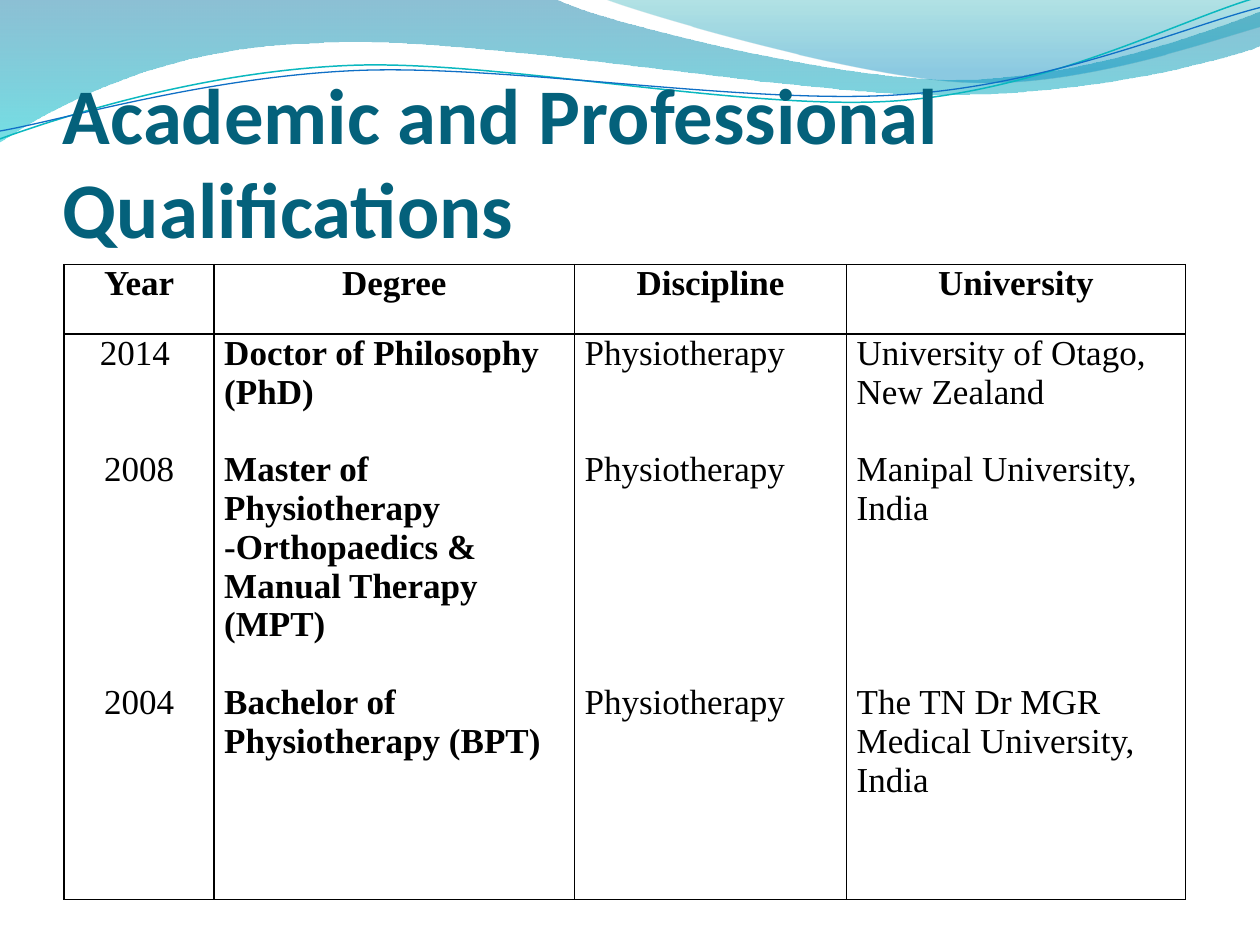
from dataclasses import dataclass

import pptx
import pptx.dml.color
import pptx.enum.text
import pptx.oxml
import pptx.oxml.ns
import pptx.util

Inches = pptx.util.Inches
Pt = pptx.util.Pt
qn = pptx.oxml.ns.qn
NAMESPACE = pptx.oxml.ns.nsdecls("a")
Point = tuple[float, float]
WIDTH, HEIGHT = 10, 7.5
TABLE_FONT, TABLE_SIZE = "Times New Roman", 20
LINE_PITCH = 22.15  # height in points of one line of table text


@dataclass
class Stop:
    position: float
    color: str
    opacity: int


@dataclass
class Wave:
    """Outline in inches: a segment of one point is straight, of three a Bézier curve."""
    start: Point
    segments: list[list[Point]]
    stops: tuple[Stop, ...] = ()
    line_color: str = ""
    line_width: float = 0


@dataclass
class Column:
    heading: str
    width: float
    entries: tuple[str, str, str]
    line_counts: tuple[int, int, int]
    bold: bool = False
    centered: bool = False


WAVES = [
    Wave((0, 0), [
        [(4.4, -0.01)], [(4.76, 0.17), (6.64, 0.63), (7.58, 0.63)],
        [(8.53, 0.63), (9.58, 0.26), (10, 0.09)], [(10.01, 0.36)],
        [(9.83, 0.44), (8.7, 0.76), (7.46, 0.75)],
        [(6.22, 0.75), (3.82, 0.28), (2.57, 0.34)],
        [(1.29, 0.36), (0.46, 0.83), (-0.01, 1.13)], [(0, 0)],
    ], stops=(Stop(0, "0074A1", 45), Stop(1, "00C6CF", 55))),
    Wave((4.79, -0.01), [
        [(5.09, 0.11), (6.82, 0.62), (7.69, 0.65)],
        [(8.56, 0.69), (9.61, 0.32), (10, 0.21)], [(10, 0)], [(4.79, -0.01)],
    ], stops=(Stop(0, "00A1A9", 30), Stop(0.8, "008BBF", 45))),
    Wave((-0.02, 1.11), [
        [(0.48, 0.93), (1.58, 0.57), (2.77, 0.52)],
        [(3.95, 0.47), (5.93, 0.89), (7.13, 0.8)],
        [(8.33, 0.71), (9.38, 0.15), (9.98, -0.02)],
    ], line_color="0AB8BF", line_width=0.85),
    Wave((0, 1.04), [
        [(0.47, 0.96), (1.64, 0.61), (2.83, 0.56)],
        [(4.03, 0.51), (5.97, 0.84), (7.17, 0.75)],
        [(8.36, 0.67), (9.41, 0.21), (10, 0.06)],
    ], line_color="0F6FC6", line_width=0.75),
]

ENTRY_STARTS = (0, 3, 9)  # text line on which each qualification begins
COLUMNS = [
    Column("Year", 1.19, ("2014 ", "2008", "2004"), (1, 1, 1), centered=True),
    Column("Degree", 2.86, (
        "Doctor of Philosophy (PhD)",
        "Master of Physiotherapy -Orthopaedics & Manual Therapy (MPT)",
        "Bachelor of Physiotherapy (BPT)"), (2, 5, 2), bold=True),
    Column("Discipline", 2.16, ("Physiotherapy",) * 3, (1, 1, 1)),
    Column("University", 2.69, (
        "University of Otago, New Zealand",
        "Manipal University, India",
        "The TN Dr MGR Medical University, India"), (2, 2, 3)),
]
ROW_HEIGHTS = (0.55, 4.49)


def rgb(color: str) -> pptx.dml.color.RGBColor:
    return pptx.dml.color.RGBColor.from_string(color)


def bend(shape, segments: list[list[Point]]) -> None:
    """Join the three straight steps of each curved segment into one Bézier curve."""
    steps = iter(shape.element.spPr.findall(".//" + qn("a:lnTo")))
    for segment in segments:
        group = [next(steps) for _ in segment]
        if len(group) == 1:
            continue
        curve = pptx.oxml.parse_xml(f"<a:cubicBezTo {NAMESPACE}/>")
        group[0].addprevious(curve)
        for step in group:
            curve.append(step[0])
            step.getparent().remove(step)


def draw_wave(slide, wave: Wave) -> None:
    points = [wave.start] + [point for segment in wave.segments for point in segment]
    first, *rest = [(Inches(x), Inches(y)) for x, y in points]
    builder = slide.shapes.build_freeform(*first)
    builder.add_line_segments(rest, close=bool(wave.stops))
    shape = builder.convert_to_shape()
    bend(shape, wave.segments)
    shape.shadow.inherit = False
    if not wave.stops:
        shape.fill.background()
        shape.line.color.rgb = rgb(wave.line_color)
        shape.line.width = Pt(wave.line_width)
        return
    shape.line.fill.background()
    shape.fill.gradient()
    shape.fill.gradient_angle = 270
    for target, stop in zip(shape.fill.gradient_stops, wave.stops):
        target.position = stop.position
        target.color.rgb = rgb(stop.color)
    colors = shape.element.spPr.findall(".//" + qn("a:srgbClr"))
    for color, stop in zip(colors, wave.stops):
        color.append(pptx.oxml.parse_xml(
            f'<a:alpha {NAMESPACE} val="{stop.opacity * 1000}"/>'))


def add_run(para, text: str, font: str, size: float, color: str, bold: bool) -> None:
    span = para.add_run()
    span.text = text
    span.font.name = font
    span.font.size = Pt(size)
    span.font.color.rgb = rgb(color)
    span.font.bold = bold


def draw_title(slide, text: str) -> None:
    box = slide.shapes.add_textbox(Inches(0.05 * WIDTH), Inches(0.77),
                                   Inches(0.9 * WIDTH), Inches(1.25))
    frame = box.text_frame
    frame.word_wrap = True
    frame.vertical_anchor = pptx.enum.text.MSO_ANCHOR.BOTTOM
    frame.margin_left = frame.margin_right = frame.margin_bottom = 0
    add_run(frame.paragraphs[0], text, "Calibri", 45, "04617B", True)


def style_cell(cell) -> None:
    """Clear the fill, set the margins and rule all four sides in black."""
    cell.margin_left = cell.margin_right = Inches(0.08)
    cell.margin_top = cell.margin_bottom = 0
    properties = cell._tc.get_or_add_tcPr()
    for side in ("lnL", "lnR", "lnT", "lnB"):
        properties.append(pptx.oxml.parse_xml(
            f'<a:{side} {NAMESPACE} w="{Pt(1)}"><a:solidFill>'
            f'<a:srgbClr val="000000"/></a:solidFill></a:{side}>'))
    cell.fill.background()


def write_cell(cell, entries: tuple[str, ...], gaps: list[int],
               bold: bool, centered: bool) -> None:
    """Write one paragraph per entry, each after a gap counted in lines."""
    style_cell(cell)
    align = pptx.enum.text.PP_ALIGN
    frame = cell.text_frame
    for index, (entry, gap) in enumerate(zip(entries, gaps)):
        para = frame.add_paragraph() if index else frame.paragraphs[0]
        para.alignment = align.CENTER if centered else align.LEFT
        para.space_before = Pt(gap * LINE_PITCH)
        add_run(para, entry, TABLE_FONT, TABLE_SIZE, "000000", bold)


def draw_table(slide) -> None:
    frame = slide.shapes.add_table(
        len(ROW_HEIGHTS), len(COLUMNS), Inches(0.51), Inches(2.1),
        Inches(sum(column.width for column in COLUMNS)), Inches(sum(ROW_HEIGHTS)))
    table = frame.table
    table.horz_banding = False
    for row, height in zip(table.rows, ROW_HEIGHTS):
        row.height = Inches(height)
    for index, column in enumerate(COLUMNS):
        table.columns[index].width = Inches(column.width)
        write_cell(table.cell(0, index), (column.heading,), [0], True, True)
        ends = [0] + [s + n for s, n in zip(ENTRY_STARTS, column.line_counts)]
        gaps = [start - end for start, end in zip(ENTRY_STARTS, ends)]
        write_cell(table.cell(1, index), column.entries, gaps,
                   column.bold, column.centered)


def main() -> None:
    deck = pptx.Presentation()
    deck.slide_width, deck.slide_height = Inches(WIDTH), Inches(HEIGHT)
    slide = deck.slides.add_slide(deck.slide_layouts[6])
    for wave in WAVES:
        draw_wave(slide, wave)
    draw_title(slide, "Academic and Professional Qualifications")
    draw_table(slide)
    deck.save("out.pptx")


if __name__ == "__main__":
    main()
